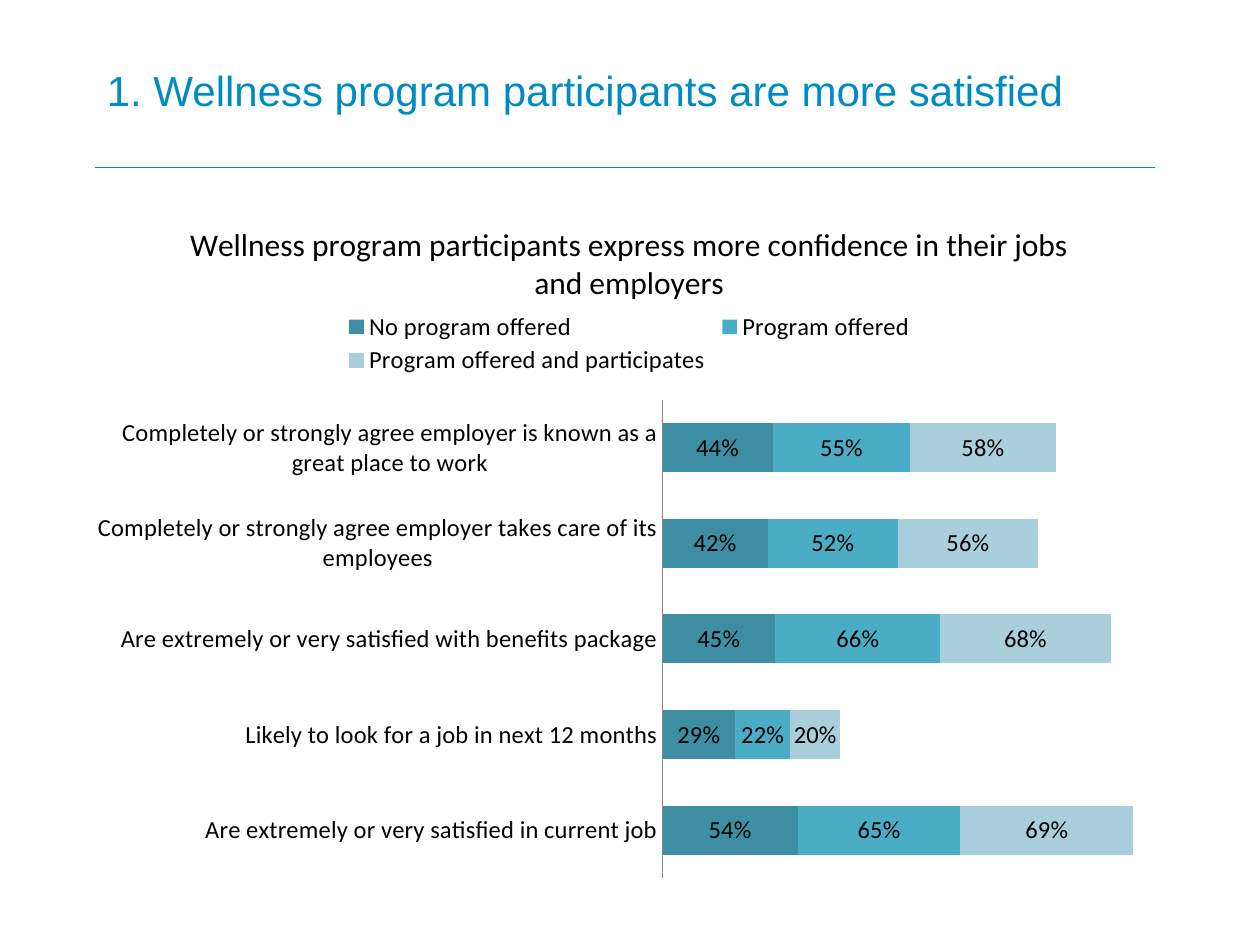
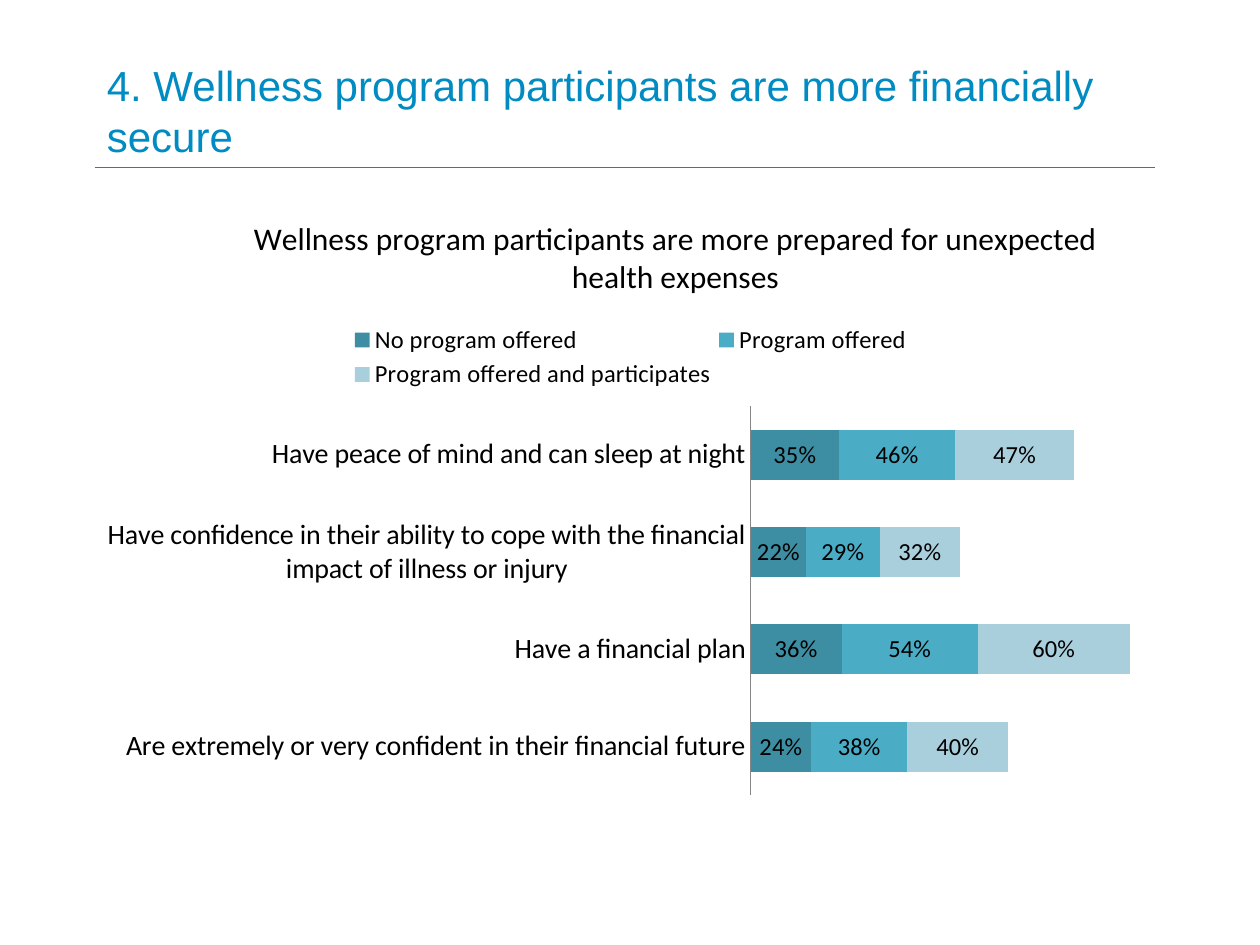
"""Build two slides of stacked bar charts on wellness programs."""
from dataclasses import dataclass

from lxml.etree import SubElement
from pptx import Presentation
from pptx.chart.data import CategoryChartData as ChartData
from pptx.dml.color import RGBColor as RGB
from pptx.enum.chart import XL_CHART_TYPE as Kind, XL_LEGEND_POSITION as Side
from pptx.enum.chart import XL_TICK_LABEL_POSITION as Place, XL_TICK_MARK as Tick
from pptx.enum.shapes import MSO_CONNECTOR as Line
from pptx.enum.text import MSO_ANCHOR as Anchor
from pptx.oxml import parse_xml
from pptx.oxml.ns import nsdecls, qn
from pptx.util import Inches, Pt


@dataclass(frozen=True)
class Theme:
    blue: RGB = RGB.from_string("008BC2")
    black: RGB = RGB.from_string("000000")
    gray: RGB = RGB.from_string("868686")
    bars: tuple = ("3E8EA3", "4BACC6", "A9CEDC")
    head: str = "Arial"
    body: str = "Calibri"
    large: Pt = Pt(24)
    title: Pt = Pt(18)
    label: Pt = Pt(14)


def style(font, size, name=Theme.body, color=Theme.black):
    font.size, font.name, font.bold = size, name, False
    font.color.rgb = color


def arrange(part, after, box, inner=False):
    for old in part.findall(qn("c:layout")):
        part.remove(old)
    layout = parse_xml(f"<c:layout {nsdecls('c')}><c:manualLayout/></c:layout>")
    rows = [("layoutTarget", "inner")] if inner else []
    rows += [("xMode", "edge"), ("yMode", "edge"), *zip("xywh", box)]
    for tag, val in rows:
        SubElement(layout[0], qn(f"c:{tag}")).set("val", str(val))
    if after:
        part.find(qn(after)).addnext(layout)
    else:
        part.insert(0, layout)


theme = Theme()
groups = ("No program offered", "Program offered", "Program offered and participates")
pages = [
    dict(
        head="1. Wellness program participants are more satisfied",
        top=0.46, anchor=Anchor.TOP, frame=(0.58, 1.5, 8.83, 5.58),
        title="Wellness program participants express more confidence in their jobs and employers",
        spot=(0.1, 0.04), key=(0.24, 0.17, 0.52, 0.1), plot=(0.53, 0.3, 0.45, 0.68),
        top_val=2, size=Pt(14),
        rows=[
            ("Are extremely or very satisfied in current job", 0.54, 0.65, 0.69),
            ("Likely to look for a job in next 12 months", 0.29, 0.22, 0.2),
            ("Are extremely or very satisfied with benefits package", 0.45, 0.66, 0.68),
            ("Completely or strongly agree employer takes care of its employees",
             0.42, 0.52, 0.56),
            ("Completely or strongly agree employer is known as a great place to work",
             0.44, 0.55, 0.58),
        ],
    ),
    dict(
        head="4. Wellness program participants are more financially secure",
        top=0.25, anchor=Anchor.MIDDLE, frame=(0.67, 1.58, 8.67, 4.83),
        title="Wellness program participants are more prepared for unexpected health expenses",
        spot=(0.15, 0.02), key=(0.24, 0.2, 0.52, 0.12), plot=(0.61, 0.34, 0.37, 0.64),
        top_val=1.6, size=Pt(16),
        rows=[
            ("Are extremely or very confident in their financial future", 0.24, 0.38, 0.4),
            ("Have a financial plan", 0.36, 0.54, 0.6),
            ("Have confidence in their ability to cope with the financial impact "
             "of illness or injury", 0.22, 0.29, 0.32),
            ("Have peace of mind and can sleep at night", 0.35, 0.46, 0.47),
        ],
    ),
]

deck = Presentation()
deck.slide_width, deck.slide_height = Inches(10), Inches(7.5)

for page in pages:
    shapes = deck.slides.add_slide(deck.slide_layouts[6]).shapes

    rule = shapes.add_connector(
        Line.STRAIGHT, Inches(0.75), Inches(1.33), Inches(9.17), Inches(1.33))
    rule.line.color.rgb, rule.line.width = theme.blue, Pt(1)
    SubElement(rule.element.spPr, qn("a:effectLst"))

    data = ChartData(number_format="0%")
    names, *cols = zip(*page["rows"])
    data.categories = names
    for group, vals in zip(groups, cols):
        data.add_series(group, vals)
    frame = map(Inches, page["frame"])
    chart = shapes.add_chart(Kind.BAR_STACKED, *frame, data).chart
    style(chart.font, Pt(10))

    chart.has_title = True
    text = chart.chart_title.text_frame
    text.text = page["title"]
    style(text.paragraphs[0].runs[0].font, theme.title)
    chart.chart_title.include_in_layout = False
    arrange(text.paragraphs[0].runs[0]._r.xpath("ancestor::c:title")[0],
            "c:tx", page["spot"])

    chart.has_legend = True
    legend = chart.legend
    legend.position, legend.include_in_layout = Side.TOP, False
    style(legend.font, theme.label)
    area = chart.element.chart
    arrange(area.find(qn("c:legend")), "c:legendPos", page["key"])
    arrange(area.plotArea, None, page["plot"], inner=True)

    cats, vals = chart.category_axis, chart.value_axis
    cats.major_tick_mark = cats.minor_tick_mark = Tick.NONE
    cats.tick_label_position = Place.NEXT_TO_AXIS
    cats.format.line.color.rgb = theme.gray
    style(cats.tick_labels.font, page["size"])
    vals.visible = vals.has_major_gridlines = False
    vals.minimum_scale, vals.maximum_scale = 0, page["top_val"]

    plot = chart.plots[0]
    plot.gap_width, plot.overlap, plot.vary_by_categories = 95, 100, False
    for bar, color in zip(plot.series, theme.bars):
        bar.format.fill.solid()
        bar.format.fill.fore_color.rgb = RGB.from_string(color)
        labels = bar.data_labels
        labels.show_value = True
        labels.number_format, labels.number_format_is_linked = "0%", False
        style(labels.font, theme.label)

    box = shapes.add_textbox(Inches(0.75), Inches(page["top"]), Inches(9), Inches(1.25))
    text = box.text_frame
    text.word_wrap, text.vertical_anchor = True, page["anchor"]
    text.text = page["head"]
    style(text.paragraphs[0].runs[0].font, theme.large, theme.head, theme.blue)

deck.save("out.pptx")
